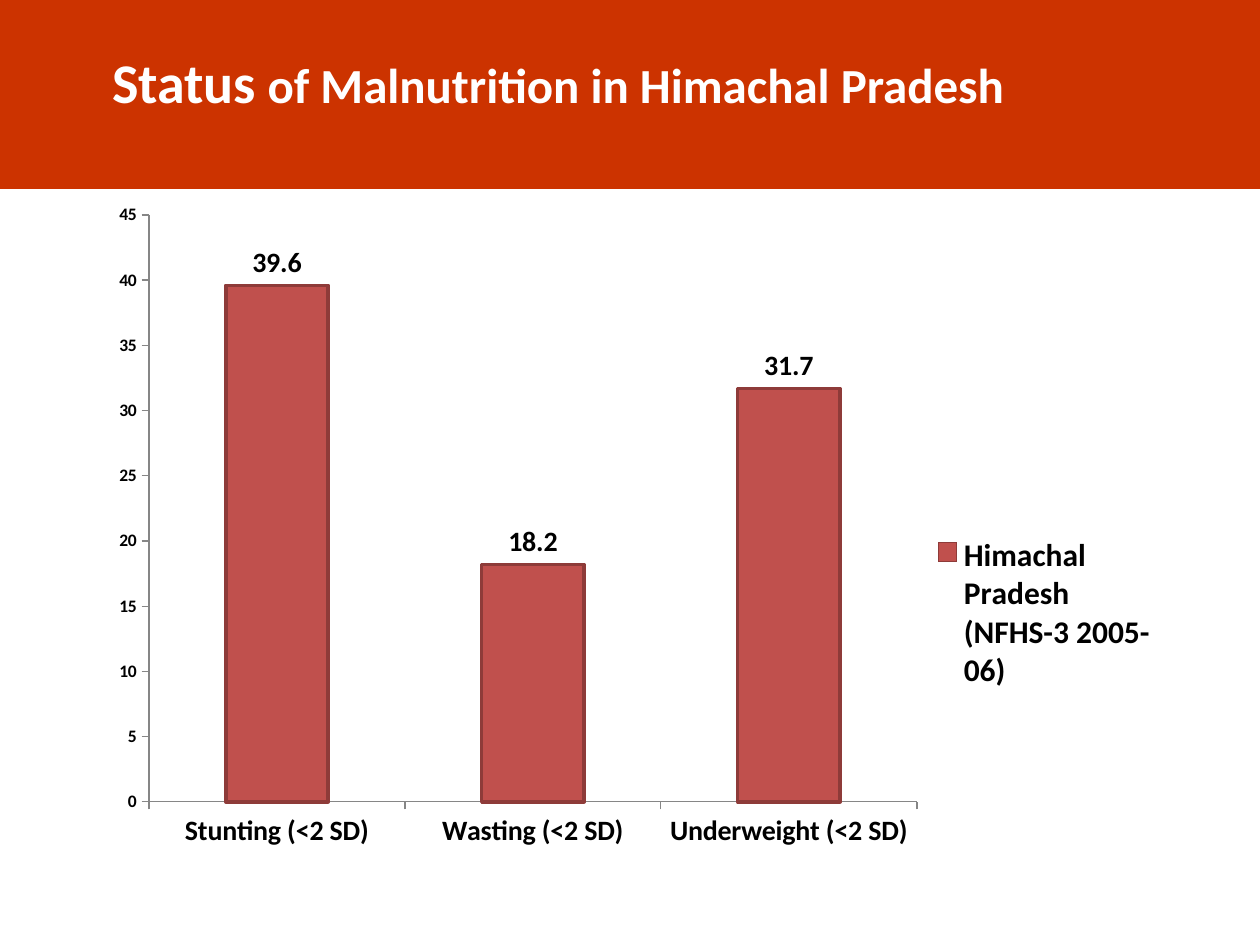
from lxml.etree import SubElement
from pptx import Presentation
from pptx.chart.data import CategoryChartData
from pptx.dml.color import RGBColor
from pptx.enum.chart import XL_CHART_TYPE as ChartType
from pptx.enum.chart import XL_LABEL_POSITION as LabelPosition
from pptx.enum.chart import XL_LEGEND_POSITION as LegendPosition
from pptx.enum.chart import XL_TICK_MARK as TickMark
from pptx.enum.shapes import MSO_SHAPE as Shape
from pptx.enum.text import MSO_ANCHOR as Anchor
from pptx.enum.text import MSO_AUTO_SIZE as AutoSize
from pptx.enum.text import PP_ALIGN as Align
from pptx.oxml import parse_xml
from pptx.oxml.ns import nsdecls, qn
from pptx.util import Emu, Pt

EMU_PER_PX = 914400 // 126
FONT = "Calibri"
BLACK = "000000"


def px(*lengths):
    return [Emu(length * EMU_PER_PX) for length in lengths]


def color(hex_value):
    return RGBColor.from_string(hex_value)


def style_font(font, size, hex_value=BLACK, bold=True):
    font.name = FONT
    font.size = Pt(size)
    font.bold = bold
    font.color.rgb = color(hex_value)


def add_banner(slide, box, fill):
    banner = slide.shapes.add_shape(Shape.RECTANGLE, *px(*box))
    banner.shadow.inherit = False
    banner.fill.solid()
    banner.fill.fore_color.rgb = color(fill)
    banner.line.fill.background()
    tree = slide.shapes.element
    tree.remove(banner.element)
    tree.insert(2, banner.element)


def set_title(slide, box, runs):
    title = slide.shapes.title
    title.left, title.top, title.width, title.height = px(*box)
    frame = title.text_frame
    frame.word_wrap = True
    frame.auto_size = AutoSize.NONE
    frame.vertical_anchor = Anchor.TOP
    paragraph = frame.paragraphs[0]
    paragraph.alignment = Align.CENTER
    for text, size in runs:
        run = paragraph.add_run()
        run.text = text
        style_font(run.font, size, "FFFFFF")


def set_layout(element, chart_box, box, target=None):
    left, top, width, height = chart_box
    values = {
        "x": (box[0] - left) / width,
        "y": (box[1] - top) / height,
        "w": box[2] / width,
        "h": box[3] / height,
    }
    for old in element.findall(qn("c:layout")):
        element.remove(old)
    layout = parse_xml(f"<c:layout {nsdecls('c')}/>")
    manual = SubElement(layout, qn("c:manualLayout"))
    if target:
        SubElement(manual, qn("c:layoutTarget")).set("val", target)
    for name in "xy":
        SubElement(manual, qn(f"c:{name}Mode")).set("val", "edge")
    for name, value in values.items():
        SubElement(manual, qn(f"c:{name}")).set("val", f"{value:.4f}")
    position = element.find(qn("c:legendPos"))
    if position is None:
        element.insert(0, layout)
    else:
        position.addnext(layout)


def style_axis(axis, size):
    axis.has_major_gridlines = False
    axis.major_tick_mark = TickMark.OUTSIDE
    axis.minor_tick_mark = TickMark.NONE
    axis.format.line.color.rgb = color("868686")
    axis.format.line.width = Pt(0.75)
    style_font(axis.tick_labels.font, size)


def style_series(plot):
    plot.gap_width = 150
    plot.vary_by_categories = False
    series = plot.series[0]
    series.format.fill.solid()
    series.format.fill.fore_color.rgb = color("C0504D")
    series.format.line.color.rgb = color("8E3B39")
    series.format.line.width = Pt(2)
    labels = series.data_labels
    labels.show_value = True
    labels.position = LabelPosition.OUTSIDE_END
    style_font(labels.font, 16)


def add_malnutrition_chart(slide, box, plot_box, legend_box):
    data = CategoryChartData()
    data.categories = ["Stunting (<2 SD)", "Wasting (<2 SD)", "Underweight (<2 SD)"]
    data.add_series("Himachal Pradesh \n(NFHS-3 2005-06)", [39.6, 18.2, 31.7])
    chart = slide.shapes.add_chart(ChartType.COLUMN_CLUSTERED, *px(*box), data).chart
    style_font(chart.font, 10, bold=False)
    chart.has_title = False
    style_axis(chart.category_axis, 16)
    style_axis(chart.value_axis, 10)
    chart.value_axis.minimum_scale = 0
    chart.value_axis.maximum_scale = 45
    chart.value_axis.major_unit = 5
    style_series(chart.plots[0])
    chart.has_legend = True
    legend = chart.legend
    legend.position = LegendPosition.RIGHT
    legend.include_in_layout = False
    style_font(legend.font, 18)
    plot_area = chart.element.find(qn("c:chart")).find(qn("c:plotArea"))
    set_layout(plot_area, box, plot_box, "inner")
    set_layout(plot_area.getparent().find(qn("c:legend")), box, legend_box)


def main():
    presentation = Presentation()
    presentation.slide_width, presentation.slide_height = px(1260, 945)
    slide = presentation.slides.add_slide(presentation.slide_layouts[5])
    add_banner(slide, (0, 0, 1260, 189), "CC3300")
    add_malnutrition_chart(
        slide, (98, 193, 1082, 669), (149, 215, 768, 587), (928, 534, 232, 158)
    )
    set_title(
        slide,
        (29, 41, 1058, 118),
        [("Status", 32), (" of Malnutrition in Himachal Pradesh", 28)],
    )
    presentation.save("out.pptx")


if __name__ == "__main__":
    main()
